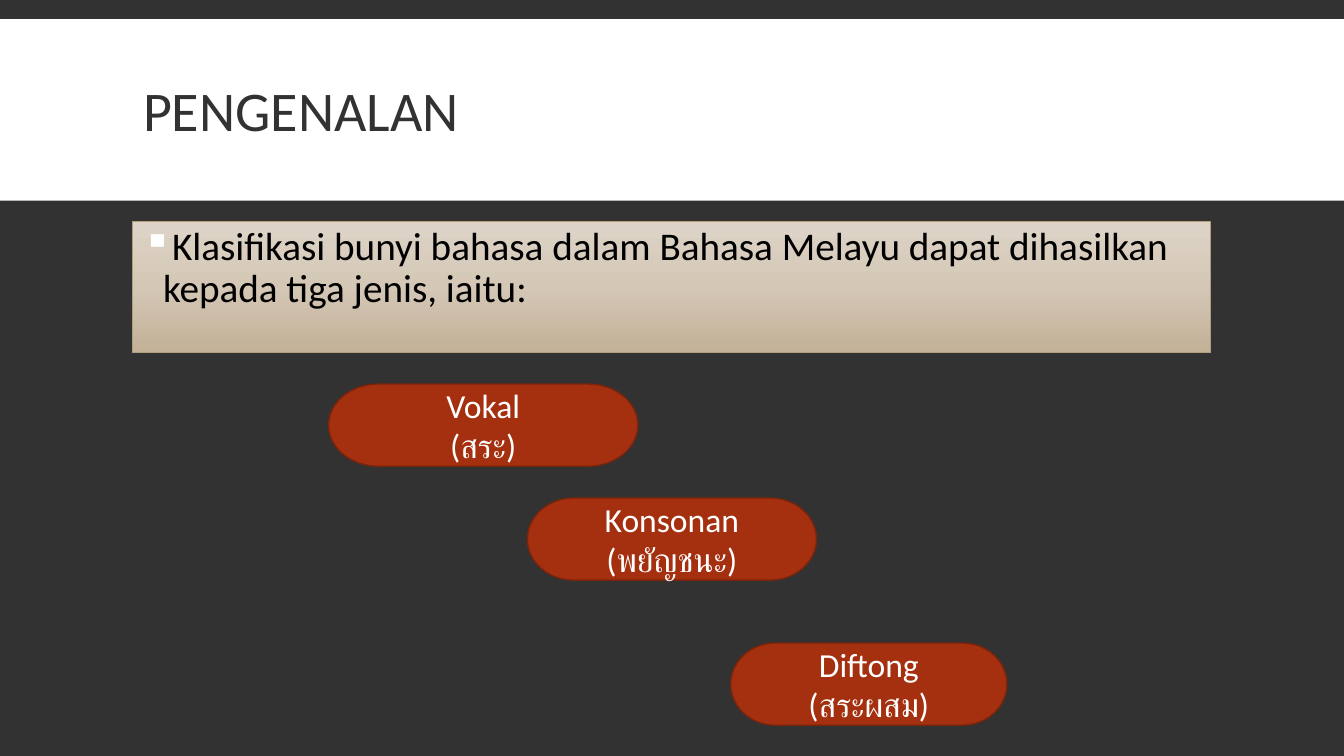
import copy
import lxml.etree
import pptx
import pptx.util
import pptx.dml.color
import pptx.enum.shapes
import pptx.enum.text
import pptx.oxml.ns

Pt = pptx.util.Pt
SHAPE = pptx.enum.shapes.MSO_SHAPE
ALIGN = pptx.enum.text.PP_ALIGN
ANCHOR = pptx.enum.text.MSO_ANCHOR
qn = pptx.oxml.ns.qn

HUES = {
    "dark": "323232", "white": "FFFFFF", "black": "000000",
    "red": "A5300F", "rim": "7A240B", "edge": "B19C7D",
    "sand1": "DDD4C7", "sand2": "D4C7B6", "sand3": "C3B097",
}


def hue(name):
    return pptx.dml.color.RGBColor.from_string(HUES[name])


def write(shape, text, size, color, align=ALIGN.LEFT, anchor=ANCHOR.MIDDLE,
          **spacing):
    """Fill a shape with text, one paragraph per line."""
    frame = shape.text_frame
    frame.word_wrap = True
    frame.auto_size = pptx.enum.text.MSO_AUTO_SIZE.NONE
    frame.vertical_anchor = anchor
    frame.text = text
    for para in frame.paragraphs:
        para.alignment = align
        for name, value in spacing.items():
            setattr(para, name, value)
        for run in para.runs:
            run.font.name = "Calibri"
            run.font.size = Pt(size)
            run.font.color.rgb = hue(color)


def draw(slide, kind, box, fill, line=None, width=1):
    shape = slide.shapes.add_shape(kind, *map(Pt, box))
    shape.shadow.inherit = False
    shape.fill.solid()
    shape.fill.fore_color.rgb = hue(fill)
    if line:
        shape.line.color.rgb = hue(line)
        shape.line.width = Pt(width)
    else:
        shape.line.fill.background()
    return shape


def shade(shape, names):
    """Set a downward gradient with three even stops."""
    shape.fill.gradient()
    shape.fill.gradient_angle = 270
    stops = shape._element.spPr.find(".//" + qn("a:gsLst"))
    stops.insert(1, copy.deepcopy(stops[0]))
    for i, (stop, name) in enumerate(zip(shape.fill.gradient_stops, names)):
        stop.color.rgb = hue(name)
        stop.position = i / 2


def bullet(para, mark, color, indent):
    props = para._p.get_or_add_pPr()
    props.set("marL", str(Pt(indent)))
    props.set("indent", str(-Pt(indent)))
    tint = lxml.etree.SubElement(props, qn("a:buClr"))
    lxml.etree.SubElement(tint, qn("a:srgbClr"), val=HUES[color])
    lxml.etree.SubElement(props, qn("a:buChar"), char=mark)


def header(slide, box):
    x, y, w, h = box
    band = draw(slide, SHAPE.RECTANGLE, box, "white")
    title = slide.shapes.title
    title._element.addprevious(band._element)  # band lies behind the title
    title.left, title.top = Pt(x + 95), Pt(y + 8.6)
    title.width, title.height = Pt(w - 190), Pt(h - 10.8)
    write(title, "PENGENALAN", 40, "dark", line_spacing=0.85)


def intro(slide, box):
    panel = draw(slide, SHAPE.RECTANGLE, box, "sand1", "edge", 0.75)
    shade(panel, ("sand1", "sand2", "sand3"))
    write(panel, "Klasifikasi bunyi bahasa dalam Bahasa Melayu dapat "
          "dihasilkan kepada tiga jenis, iaitu:", 28, "black",
          anchor=ANCHOR.TOP, line_spacing=0.9,
          space_before=Pt(12), space_after=Pt(2))
    bullet(panel.text_frame.paragraphs[0], "▪", "white", 14.4)


def sounds(slide, box):
    """Place the three sound classes as steps going down to the right."""
    x, y, w, h = box
    steps = (
        ("Vokal\n(สระ)", 0, 0, 221),
        ("Konsonan\n(พยัญชนะ)", 142, 81.4, 206.6),
        ("Diftong\n(สระผสม)", w - 197.3, h - 58.7, 197.3),
    )
    for text, dx, dy, wide in steps:
        pill = draw(slide, SHAPE.FLOWCHART_TERMINATOR,
                    (x + dx, y + dy, wide, 58.7), "red", "rim")
        write(pill, text, 24, "white", ALIGN.CENTER)


def main():
    deck = pptx.Presentation()
    deck.slide_width, deck.slide_height = Pt(960), Pt(540)
    slide = deck.slides.add_slide(deck.slide_layouts[5])
    slide.background.fill.solid()
    slide.background.fill.fore_color.rgb = hue("dark")
    header(slide, (0, 13.7, 960, 129.6))
    intro(slide, (95, 158.4, 770, 93.6))
    sounds(slide, (234.7, 274.3, 484.6, 243.7))
    deck.save("out.pptx")


if __name__ == "__main__":
    main()
